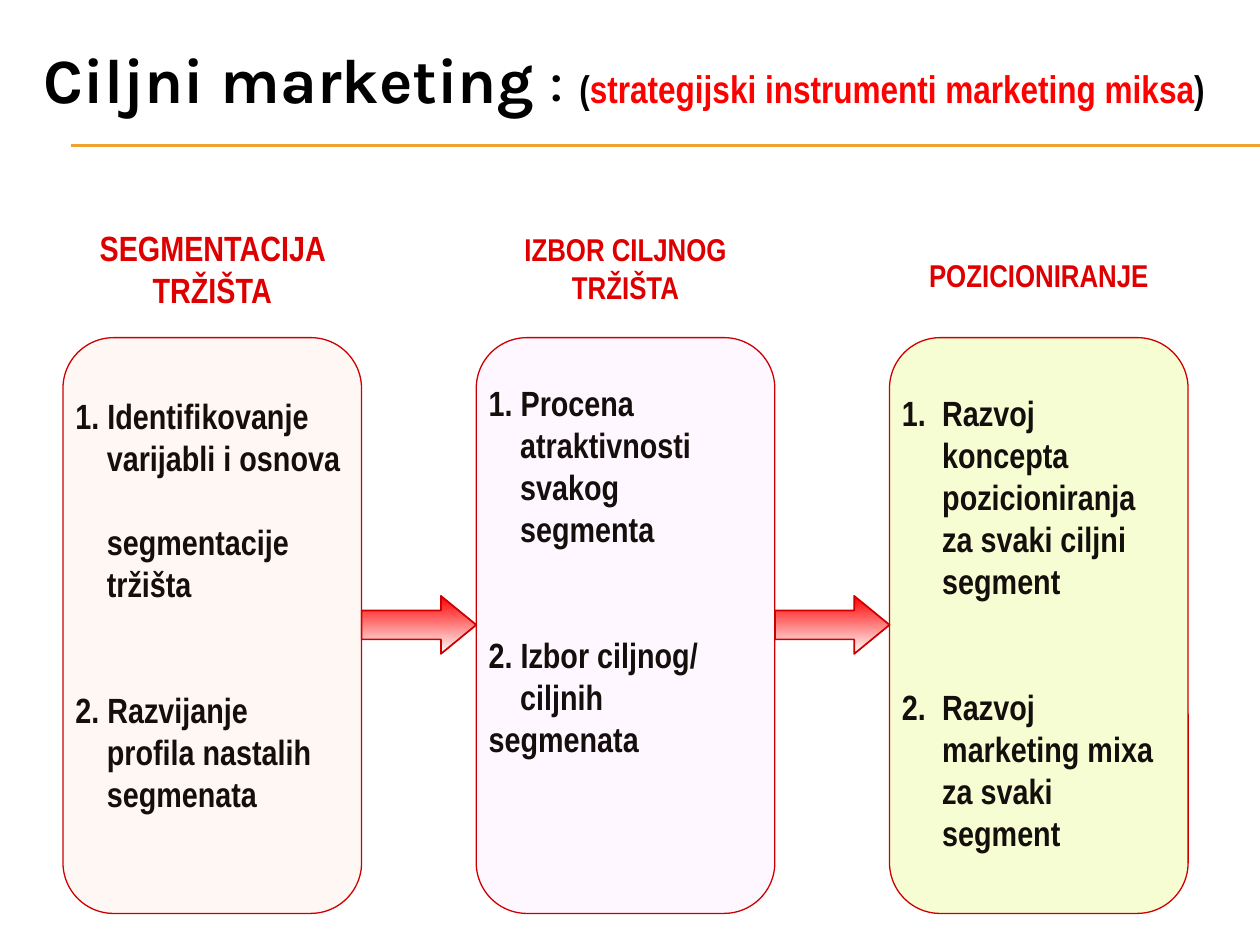
from lxml import etree
from pptx import Presentation
from pptx.dml.color import RGBColor
from pptx.enum.shapes import MSO_CONNECTOR as Line, MSO_SHAPE as Shape
from pptx.enum.text import MSO_ANCHOR as Anchor, PP_ALIGN as Align
from pptx.oxml.ns import qn
from pptx.util import Inches, Pt

BLACK = RGBColor(0, 0, 0)
INK = RGBColor(0x14, 0x0F, 0x0C)
RED = RGBColor(0xFF, 0, 0)
HEAD = RGBColor(0xDE, 0, 0)
EDGE = RGBColor(0xCC, 0, 0)
GOLD = RGBColor(0xF0, 0xA2, 0x2E)
WHITE = RGBColor(0xFF, 0xFF, 0xFF)
ROSE = RGBColor(0xFF, 0xF7, 0xF3)
LILAC = RGBColor(0xFF, 0xF7, 0xFF)
LIME = RGBColor(0xF6, 0xFD, 0xD3)

# Column grid, in inches
LEFT, STEP, WIDE = 0.5, 3.28, 2.37
TOP, END = 2.68, 7.25

# Fill, text top, heading, heading size, indent, lines as (text, gap in points)
COLS = [
    (ROSE, 1.75, "SEGMENTACIJA TRŽIŠTA", 20, 0.25, [
        ("1. Identifikovanje", 48), ("varijabli i osnova", 0),
        ("segmentacije", 24), ("tržišta", 0),
        ("2. Razvijanje", 48), ("profila nastalih", 0), ("segmenata", 0)]),
    (LILAC, 1.78, "IZBOR CILJNOG TRŽIŠTA", 18, 0.25, [
        ("1. Procena", 43), ("atraktivnosti", 0), ("svakog", 0),
        ("segmenta", 0), ("2. Izbor ciljnog/", 48), ("ciljnih", 0),
        ("segmenata", 0)]),
    (LIME, 1.98, "POZICIONIRANJE", 18, 0.32, [
        ("1.\tRazvoj", 56), ("koncepta", 0), ("pozicioniranja", 0),
        ("za svaki ciljni", 0), ("segment", 0), ("2.\tRazvoj", 48),
        ("marketing mixa", 0), ("za svaki", 0), ("segment", 0)]),
]
FLUSH = (1, 6)  # column and line that return to the left edge


def write(para, text, size=20, color=INK, bold=True, face="Arial Narrow"):
    run = para.add_run()
    run.text = text
    font = run.font
    font.name, font.size, font.bold = face, Pt(size), bold
    font.color.rgb = color


class Deck:
    def __init__(self):
        self.prs = Presentation()
        self.prs.slide_width, self.prs.slide_height = Inches(10), Inches(7.5)
        self.slide = self.prs.slides.add_slide(self.prs.slide_layouts[6])

    def rule(self, y):
        line = self.slide.shapes.add_connector(
            Line.STRAIGHT, Inches(0.56), Inches(y), Inches(10), Inches(y))
        line.line.color.rgb, line.line.width = GOLD, Pt(0.75)
        etree.SubElement(line._element.spPr, qn("a:effectLst"))

    def box(self, x, y, w, h, anchor=Anchor.TOP):
        shape = self.slide.shapes.add_textbox(
            Inches(x), Inches(y), Inches(w), Inches(h))
        frame = shape.text_frame
        frame.word_wrap, frame.vertical_anchor = True, anchor
        return frame

    def shape(self, kind, x, y, w, h, adj, width):
        item = self.slide.shapes.add_shape(
            kind, Inches(x), Inches(y), Inches(w), Inches(h))
        item.shadow.inherit = False
        item.line.color.rgb, item.line.width = EDGE, Pt(width)
        for i, value in enumerate(adj):
            item.adjustments[i] = value
        return item

    def card(self, x, fill):
        item = self.shape(Shape.ROUNDED_RECTANGLE, x, TOP, WIDE, END - TOP,
                          [0.17], 0.75)
        item.fill.solid()
        item.fill.fore_color.rgb = fill

    def arrow(self, x):
        item = self.shape(Shape.RIGHT_ARROW, x, 4.73, STEP - WIDE, 0.46,
                          [0.5, 0.61], 1)
        item.fill.gradient()
        item.fill.gradient_angle = 270
        for stop, color, pos in zip(item.fill.gradient_stops,
                                    (RED, WHITE), (0, 1)):
            stop.color.rgb, stop.position = color, pos

    def column(self, num, x, top, head, size, indent, lines):
        frame = self.box(x, top, WIDE, END - top)
        para = frame.paragraphs[0]
        para.alignment = Align.CENTER
        write(para, head, size=size, color=HEAD)
        for i, (text, gap) in enumerate(lines):
            para = frame.add_paragraph()
            para.space_before = Pt(gap)
            if (num, i) != FLUSH:
                props = para._p.get_or_add_pPr()
                props.set("marL", str(Inches(indent)))
                first = -Inches(indent) if text[0].isdigit() else 0
                props.set("indent", str(first))
            write(para, text)


def main():
    deck = Deck()

    # Title and double rule
    for y in (1.15, 1.16):
        deck.rule(y)
    title = deck.box(0.25, 0.16, 9.5, 0.92, Anchor.MIDDLE).paragraphs[0]
    write(title, "Ciljni marketing ", size=36, color=BLACK, face="Karla")
    write(title, ": ", size=36, color=BLACK, bold=False, face="Karla")
    for text, color in (("(", BLACK),
                        ("strategijski instrumenti marketing miksa", RED),
                        (")", BLACK)):
        write(title, text, size=22, color=color)

    # Cards with their headings and steps
    for num, (fill, *rest) in enumerate(COLS):
        x = LEFT + num * STEP
        deck.card(x, fill)
        deck.column(num, x, *rest)

    # Arrows across the gaps
    for num in range(len(COLS) - 1):
        deck.arrow(LEFT + num * STEP + WIDE)

    deck.prs.save("out.pptx")


if __name__ == "__main__":
    main()
